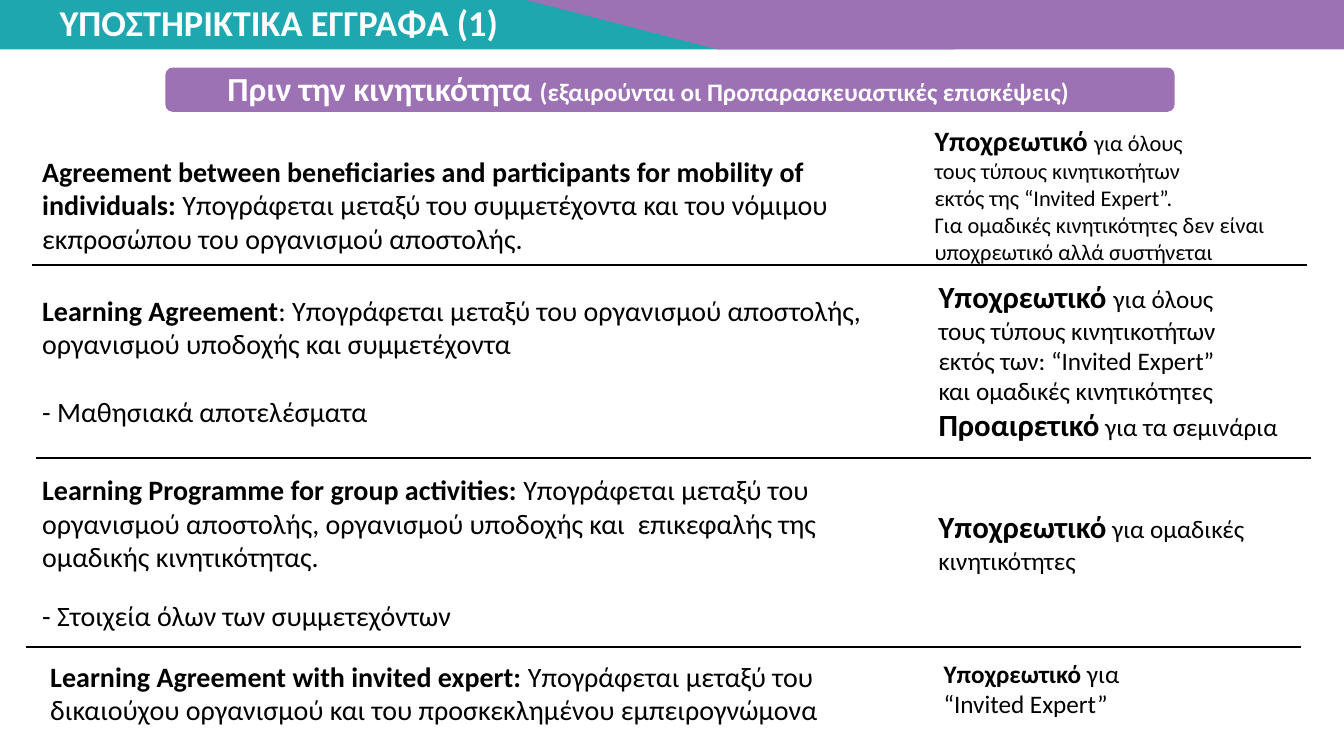
from pptx import Presentation
from pptx.dml.color import RGBColor
from pptx.enum import shapes, text
from pptx.oxml.ns import qn
from pptx.util import Inches, Pt
from lxml import etree

COLORS = {"teal": "1EA7AE", "purple": "9D72B5", "white": "FFFFFF", "black": "000000"}
FONT = "Calibri"
RECT = shapes.MSO_SHAPE.RECTANGLE
TRIANGLE = shapes.MSO_SHAPE.ISOSCELES_TRIANGLE
ROUNDED = shapes.MSO_SHAPE.ROUNDED_RECTANGLE

TITLE = "ΥΠΟΣΤΗΡΙΚΤΙΚΑ ΕΓΓΡΑΦΑ (1)"
BANDS = [
    (RECT, (0, -0.04, 9.47, 0.53), "teal", 0),
    (RECT, (7.12, -0.04, 6.21, 0.53), "purple", 180),
    (TRIANGLE, (5.07, -0.04, 4, 0.53), "purple", 180),
    (ROUNDED, (1.64, 0.67, 10.01, 0.44), "purple", 0),
]
HEADING = [[("Πριν την κινητικότητα ", 24, True),
            ("(εξαιρούνται οι Προπαρασκευαστικές επισκέψεις)", 18, True)]]

DOCUMENTS = [
    ((0.32, 1.48, 8.75, 1.11), 0, [
        [("Agreement between beneficiaries and participants for mobility of individuals: ", 20, True),
         ("Υπογράφεται μεταξύ του συμμετέχοντα και του νόμιμου εκπροσώπου του οργανισμού αποστολής.", 20, False)]]),
    ((0.32, 2.86, 8.64, 1.75), 24, [
        [("Learning Agreement", 20, True),
         (": Υπογράφεται μεταξύ του οργανισμού αποστολής, οργανισμού υποδοχής και συμμετέχοντα", 20, False)],
        [("- Μαθησιακά αποτελέσματα", 20, False)]]),
    ((0.32, 4.64, 8.8, 1.7), 18, [
        [("Learning Programme for group activities: ", 20, True),
         ("Υπογράφεται μεταξύ του οργανισμού αποστολής, οργανισμού υποδοχής και  επικεφαλής της ομαδικής κινητικότητας.", 20, False)],
        [("- Στοιχεία όλων των συμμετεχόντων", 20, False)]]),
    ((0.4, 6.49, 8.64, 1.08), 0, [
        [("Learning Agreement with invited expert: ", 20, True),
         ("Υπογράφεται μεταξύ του δικαιούχου οργανισμού και του προσκεκλημένου εμπειρογνώμονα", 20, False)]]),
]
REQUIREMENTS = [
    ((9.17, 1.18, 3.79, 1.82), True, [
        [("Υποχρεωτικό ", 20, True), ("για όλους", 16, False)],
        [("τους τύπους κινητικοτήτων", 16, False)],
        [("εκτός της “Invited Expert”.", 16, False)],
        [("Για ομαδικές κινητικότητες δεν είναι υποχρεωτικό αλλά συστήνεται", 16, False)]]),
    ((9.21, 2.71, 3.61, 1.75), False, [
        [("Υποχρεωτικό ", 22, True), ("για όλους", 18, False)],
        [("τους τύπους κινητικοτήτων", 18, False)],
        [("εκτός των: “Invited Expert”", 18, False)],
        [("και ομαδικές κινητικότητες", 18, False)],
        [("Προαιρετικό", 22, True), (" για τα σεμινάρια", 18, False)]]),
    ((9.21, 4.99, 3.27, 0.77), False, [
        [("Υποχρεωτικό", 22, True), (" για ομαδικές", 18, False)],
        [("κινητικότητες", 18, False)]]),
    ((9.26, 6.48, 2.02, 0.71), False, [
        [("Υποχρεωτικό", 18, True), (" για", 18, False)],
        [("“Invited Expert”", 18, False)]]),
]
DIVIDERS = [(0.32, 2.63), (0.36, 4.54), (0.26, 6.42)]
DIVIDER_WIDTH = 12.64


def color(name):
    return RGBColor.from_string(COLORS[name])


def add_band(s, kind, box, fill, rotation):
    sp = s.shapes.add_shape(kind, *map(Inches, box))
    sp.shadow.inherit = False
    sp.fill.solid()
    sp.fill.fore_color.rgb = color(fill)
    sp.line.fill.background()
    sp.rotation = rotation
    if kind == TRIANGLE:
        sp.adjustments[0] = 0.488


def add_text(s, box, paragraphs, ink="black", wrap=True, gap=0, align=text.PP_ALIGN.LEFT):
    tf = s.shapes.add_textbox(*map(Inches, box)).text_frame
    tf.word_wrap = wrap
    for i, runs in enumerate(paragraphs):
        p = tf.paragraphs[0] if i == 0 else tf.add_paragraph()
        p.alignment = align
        p.font.name = FONT
        p.font.color.rgb = color(ink)
        if gap and i < len(paragraphs) - 1:
            p.space_after = Pt(gap)
        for words, size, bold in runs:
            r = p.add_run()
            r.text = words
            r.font.name = FONT
            r.font.size = Pt(size)
            r.font.bold = bold
            r.font.color.rgb = color(ink)


def add_divider(s, x, y):
    line = s.shapes.add_connector(shapes.MSO_CONNECTOR.STRAIGHT, Inches(x), Inches(y),
                                  Inches(x + DIVIDER_WIDTH), Inches(y))
    line.line.color.rgb = color("black")
    line.line.width = Pt(1.5)
    etree.SubElement(line.element.spPr, qn("a:effectLst"))


def set_title(s):
    title = s.shapes.title
    title.left, title.top, title.width, title.height = map(Inches, (0.49, -0.05, 4.6, 0.54))
    tf = title.text_frame
    tf.text = TITLE
    tf.word_wrap = False
    tf.auto_size = text.MSO_AUTO_SIZE.NONE
    tf.vertical_anchor = text.MSO_ANCHOR.TOP
    p = tf.paragraphs[0]
    p.alignment = text.PP_ALIGN.LEFT
    p.line_spacing = 1.0
    p.space_before = Pt(0)
    p.font.name = FONT
    p.font.size = Pt(26)
    p.font.bold = True
    p.font.color.rgb = color("white")
    s.shapes.element.append(title.element)


def main():
    prs = Presentation()
    prs.slide_width, prs.slide_height = Inches(13.33), Inches(7.5)
    s = prs.slides.add_slide(prs.slide_layouts[5])
    for band in BANDS:
        add_band(s, *band)
    set_title(s)
    add_text(s, (1.76, 0.62, 9.34, 0.5), HEADING, ink="white", align=text.PP_ALIGN.CENTER)
    for box, gap, paragraphs in DOCUMENTS:
        add_text(s, box, paragraphs, gap=gap)
    for x, y in DIVIDERS:
        add_divider(s, x, y)
    for box, wrap, paragraphs in REQUIREMENTS:
        add_text(s, box, paragraphs, wrap=wrap)
    prs.save("out.pptx")


if __name__ == "__main__":
    main()
